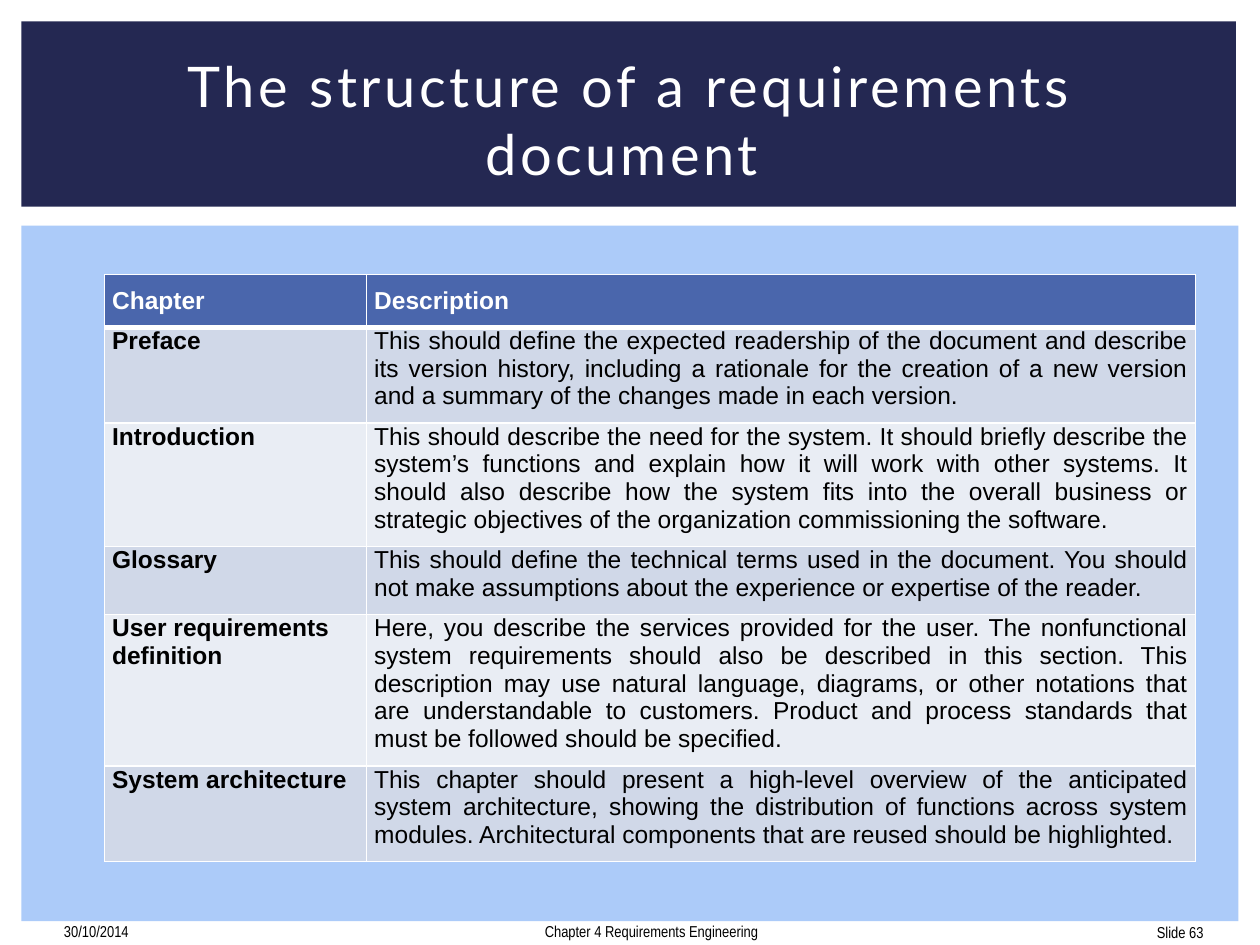
from lxml import etree
from pptx import Presentation
from pptx import util as u
from pptx.dml.color import RGBColor
from pptx.enum import shapes, text
from pptx.oxml.ns import qn

WIDTH, HEIGHT = 10, 7.5
NAVY, SKY, BLUE, WHITE, BLACK = "242852", "ACCBF9", "4A66AC", "FFFFFF", "000000"
STRIPES = ("D0D8E8", "E9EDF4")
HEADER_HEIGHT, LINE_HEIGHT, CELL_PAD = 0.41, 0.22, 0.1
LEFT, CENTER = text.PP_ALIGN.LEFT, text.PP_ALIGN.CENTER
RIGHT, JUSTIFY = text.PP_ALIGN.RIGHT, text.PP_ALIGN.JUSTIFY

HEADINGS = ("Chapter", "Description")
# Chapter, description, lines the description takes
CHAPTERS = [
    ("Preface",
     "This should define the expected readership of the document and describe its "
     "version history, including a rationale for the creation of a new version and "
     "a summary of the changes made in each version. ", 3),
    ("Introduction",
     "This should describe the need for the system. It should briefly describe the "
     "system’s functions and explain how it will work with other systems. It should "
     "also describe how the system fits into the overall business or strategic "
     "objectives of the organization commissioning the software.", 4),
    ("Glossary",
     "This should define the technical terms used in the document. You should not "
     "make assumptions about the experience or expertise of the reader.", 2),
    ("User requirements definition",
     "Here, you describe the services provided for the user. The nonfunctional "
     "system requirements should also be described in this section. This description "
     "may use natural language, diagrams, or other notations that are understandable "
     "to customers. Product and process standards that must be followed should be "
     "specified.", 5),
    ("System architecture",
     "This chapter should present a high-level overview of the anticipated system "
     "architecture, showing the distribution of functions across system modules. "
     "Architectural components that are reused should be highlighted.", 3),
]


def color(value):
    return RGBColor.from_string(value)


def inches(box):
    return [u.Inches(length) for length in box]


def write(frame, words, align, ink, **font):
    """Put one formatted paragraph into a text frame."""
    para = frame.paragraphs[0]
    para.alignment = align
    span = para.add_run()
    span.text = words
    span.font.color.rgb = color(ink)
    for name, value in font.items():
        setattr(span.font, name, value)
    return span


def add_band(page, box, fill):
    band = page.shapes.add_shape(shapes.MSO_SHAPE.RECTANGLE, *inches(box))
    band.shadow.inherit = False
    band.fill.solid()
    band.fill.fore_color.rgb = color(fill)
    band.line.fill.background()


def add_title(page, box):
    """Fill the title placeholder and bring it in front of its band."""
    title = page.shapes.title
    title.left, title.top, title.width, title.height = inches(box)
    frame = title.text_frame
    frame.auto_size = text.MSO_AUTO_SIZE.NONE
    frame.vertical_anchor = text.MSO_ANCHOR.MIDDLE
    span = write(frame, "The structure of a requirements document ", CENTER, WHITE,
                 size=u.Pt(32), name="Lato")
    span.font._element.set("spc", "200")
    title.element.getparent().append(title.element)


def add_footer(page, box, words, align):
    frame = page.shapes.add_textbox(*inches(box)).text_frame
    frame.word_wrap = True
    frame.vertical_anchor = text.MSO_ANCHOR.MIDDLE
    write(frame, words, align, BLACK, size=u.Pt(9), name="Arial Narrow")


def add_borders(cell, widths):
    """Draw white cell edges; the fill must follow them in the XML."""
    props = cell._tc.get_or_add_tcPr()
    for index, (edge, points) in enumerate(widths.items()):
        line = etree.Element(qn(f"a:{edge}"), w=str(u.Pt(points)))
        fill = etree.SubElement(line, qn("a:solidFill"))
        etree.SubElement(fill, qn("a:srgbClr"), val=WHITE)
        props.insert(index, line)


def fill_cell(cell, words, row, column):
    header = row == 0
    formats = {
        "margin_left": u.Inches(0.06),
        "margin_right": u.Inches(0.06),
        "margin_top": u.Inches(CELL_PAD if header else 0),
        "margin_bottom": u.Inches(CELL_PAD),
    }
    for name, value in formats.items():
        setattr(cell, name, value)
    cell.fill.solid()
    cell.fill.fore_color.rgb = color(BLUE if header else STRIPES[(row - 1) % 2])
    write(cell.text_frame, words, JUSTIFY if header or column else LEFT,
          WHITE if header else BLACK, size=u.Pt(14), name="Arial",
          bold=header or column == 0)
    add_borders(cell, {"lnL": 1, "lnR": 1, "lnT": 3 if row == 1 else 1,
                       "lnB": 3 if header else 1})


def add_chapter_table(page, left, top, widths):
    heights = [HEADER_HEIGHT] + [lines * LINE_HEIGHT + CELL_PAD
                                 for _, _, lines in CHAPTERS]
    box = inches((left, top, sum(widths), sum(heights)))
    table = page.shapes.add_table(len(heights), len(widths), *box).table
    for column, width in zip(table.columns, widths):
        column.width = u.Inches(width)
    for row, height in zip(table.rows, heights):
        row.height = u.Inches(height)
    for row, words in enumerate([HEADINGS] + [entry[:2] for entry in CHAPTERS]):
        for column, value in enumerate(words):
            fill_cell(table.cell(row, column), value, row, column)


def main():
    deck = Presentation()
    deck.slide_width, deck.slide_height = inches((WIDTH, HEIGHT))
    page = deck.slides.add_slide(deck.slide_layouts[5])

    # Background bands
    add_band(page, (0.17, 1.79, 9.66, 5.52), SKY)
    add_band(page, (0.17, 0.17, 9.64, 1.47), NAVY)

    # Footer line
    add_footer(page, (9.01, 7.25, 0.64, 0.3), "Slide 63", RIGHT)
    add_footer(page, (0.41, 7.24, 2.33, 0.3), "30/10/2014", LEFT)
    add_footer(page, (0.42, 7.24, 9.5, 0.3), "Chapter 4 Requirements Engineering", CENTER)

    # Title and table
    add_title(page, (0.35, 0.35, 9.31, 1.19))
    add_chapter_table(page, 0.83, 2.18, (2.08, 6.58))

    deck.save("out.pptx")


if __name__ == "__main__":
    main()
